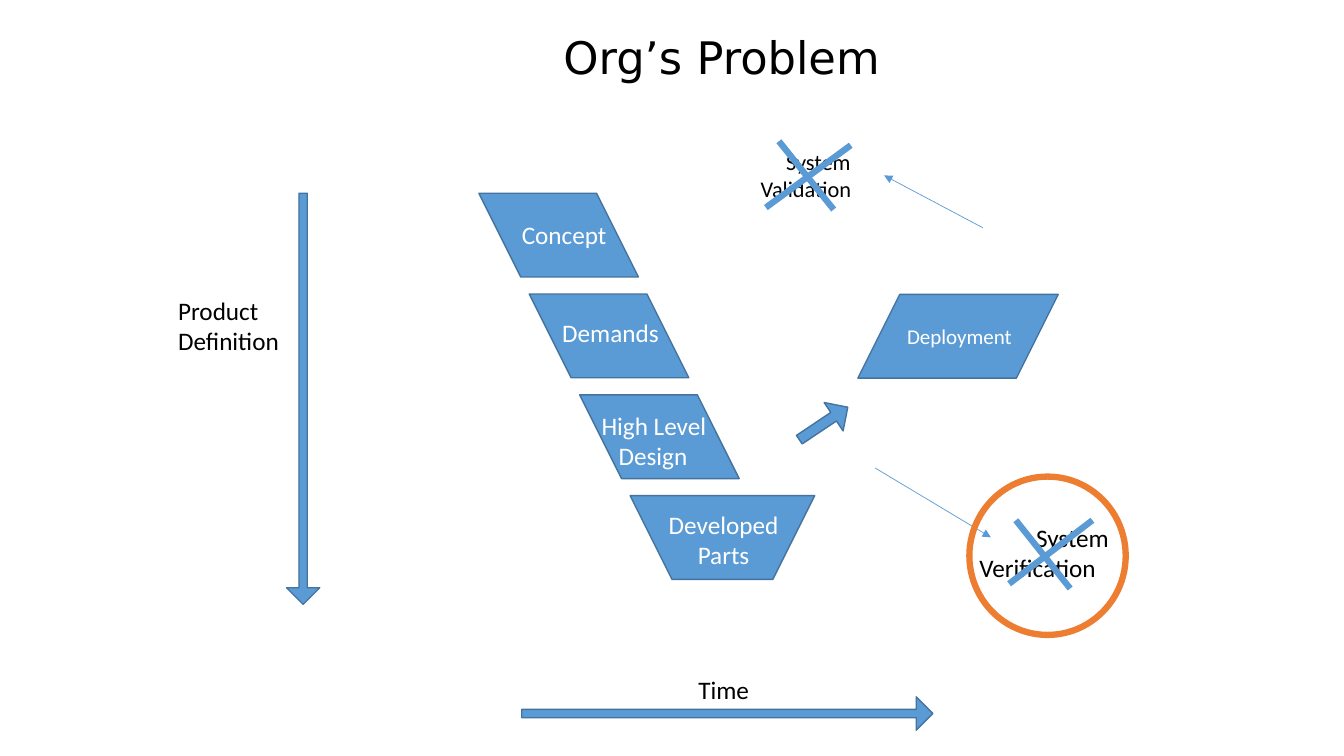
from pptx import Presentation
from pptx.dml.color import RGBColor
from pptx.enum.shapes import MSO_CONNECTOR, MSO_SHAPE as Shape
from pptx.enum.text import MSO_ANCHOR, MSO_AUTO_SIZE, PP_ALIGN as Align
from pptx.oxml.ns import qn
from pptx.util import Cm, Pt
from lxml.etree import SubElement

BLUE, EDGE, ORANGE = "5B9BD5", "43739E", "ED7D31"
BLACK, WHITE = "000000", "FFFFFF"
STAGE_WIDTH, STAGE_HEIGHT = 4.02, 2.11


def color(hex_code):
    return RGBColor.from_string(hex_code)


def style_run(run, size, hex_code, font="Calibri"):
    run.font.size = Pt(size)
    run.font.name = font
    run.font.color.rgb = color(hex_code)


def add_title(slide, text):
    title = slide.shapes.title
    title.left, title.top, title.width, title.height = Cm(5.49), Cm(0.62), Cm(25.4), Cm(1.63)
    frame = title.text_frame
    frame.auto_size = MSO_AUTO_SIZE.NONE
    frame.vertical_anchor = MSO_ANCHOR.TOP
    paragraph = frame.paragraphs[0]
    paragraph.alignment = Align.CENTER
    run = paragraph.add_run()
    run.text = text
    style_run(run, 32, BLACK, "DejaVu Sans")


def add_block(slide, kind, left, top, width, height, adjust=(),
              rotation=0, mirrored=False, fill=BLUE, line=EDGE, weight=1):
    block = slide.shapes.add_shape(kind, Cm(left), Cm(top), Cm(width), Cm(height))
    block.shadow.inherit = False
    block.rotation = rotation
    for index, value in enumerate(adjust):
        block.adjustments[index] = value
    if fill:
        block.fill.solid()
        block.fill.fore_color.rgb = color(fill)
    else:
        block.fill.background()
    block.line.color.rgb = color(line)
    block.line.width = Pt(weight)
    if mirrored:
        block._element.spPr.find(qn("a:xfrm")).set("flipH", "1")


def add_label(slide, left, top, width, lines, size=18, hex_code=BLACK, align=Align.LEFT):
    """Each line is a pair of text and left indent in centimetres."""
    box = slide.shapes.add_textbox(Cm(left), Cm(top), Cm(width), Cm(1))
    frame = box.text_frame
    frame.word_wrap = True
    frame.auto_size = MSO_AUTO_SIZE.SHAPE_TO_FIT_TEXT
    for index, (text, indent) in enumerate(lines):
        paragraph = frame.add_paragraph() if index else frame.paragraphs[0]
        paragraph.alignment = align
        if indent:
            paragraph._p.get_or_add_pPr().set("marL", str(Cm(indent)))
        run = paragraph.add_run()
        run.text = text
        style_run(run, size, hex_code)


def add_line(slide, x1, y1, x2, y2, weight, arrow=False):
    link = slide.shapes.add_connector(MSO_CONNECTOR.STRAIGHT, Cm(x1), Cm(y1), Cm(x2), Cm(y2))
    link.line.color.rgb = color(BLUE)
    link.line.width = Pt(weight)
    if arrow:
        SubElement(link.line._get_or_add_ln(), qn("a:tailEnd"), type="triangle")
    SubElement(link._element.spPr, qn("a:effectLst"))


def main():
    deck = Presentation()
    deck.slide_width, deck.slide_height = Cm(33.87), Cm(19.05)
    slide = deck.slides.add_slide(deck.slide_layouts[5])
    add_title(slide, "Org’s Problem")

    # Definition and time axes
    add_block(slide, Shape.DOWN_ARROW, 7.22, 4.87, 0.84, 10.36, (0.25, 0.5))
    add_block(slide, Shape.DOWN_ARROW, 17.91, 12.8, 0.84, 10.36, (0.25, 0.5), rotation=270)
    add_label(slide, 4.24, 7.32, 3.81, [("Product Definition", 0)])
    add_label(slide, 17.35, 16.87, 3.81, [("Time", 0)])

    # Descending side of the V
    for step in range(3):
        add_block(slide, Shape.PARALLELOGRAM, 12.07 + 1.27 * step, 4.87 + 2.54 * step,
                  STAGE_WIDTH, STAGE_HEIGHT, (0.5,), mirrored=True)
    add_label(slide, 12.9, 5.41, 3.23, [("Concept", 0)], hex_code=WHITE)
    add_label(slide, 13.92, 7.87, 3.23, [("Demands", 0)], hex_code=WHITE)
    add_label(slide, 14.91, 10.21, 3.3, [("High Level", 0), ("Design", 0.43)], hex_code=WHITE)

    # Bottom of the V
    add_block(slide, Shape.TRAPEZOID, 15.88, 12.49, 4.65, STAGE_HEIGHT, (0.5,), rotation=180)
    add_label(slide, 16.15, 12.7, 4.17, [("Developed", 0), ("Parts", 0)],
              hex_code=WHITE, align=Align.CENTER)

    # Ascending side of the V
    add_block(slide, Shape.RIGHT_ARROW, 20.02, 10.24, 1.47, 0.86, (0.3, 0.5), rotation=326.2)
    add_block(slide, Shape.PARALLELOGRAM, 21.62, 7.42, 5.05, STAGE_HEIGHT, (0.5,))
    add_label(slide, 22.61, 8.03, 3.5, [("Deployment", 0)], size=15, hex_code=WHITE)

    # Skipped checks, with the arrows that lead to them
    add_label(slide, 18.8, 3.61, 3.45, [("System", 0.76), ("Validation", 0.12)], size=16)
    add_label(slide, 24.43, 13.03, 4.5, [("System", 1.43), ("Verification", 0)])
    add_line(slide, 24.77, 5.74, 22.28, 4.42, 0.5, arrow=True)
    add_line(slide, 22.05, 11.79, 24.97, 13.54, 0.5, arrow=True)

    # Crosses over both checks
    strokes = [(21.44, 3.66, 19.3, 5.23), (19.63, 3.56, 21.01, 5.28),
               (27.53, 13.11, 25.43, 14.71), (25.6, 13.11, 26.97, 14.83)]
    for stroke in strokes:
        add_line(slide, *stroke, 4.5)

    # Ring around verification
    add_block(slide, Shape.OVAL, 24.43, 12.01, 3.94, 3.99, fill=None, line=ORANGE, weight=4.5)

    deck.save("out.pptx")


if __name__ == "__main__":
    main()
